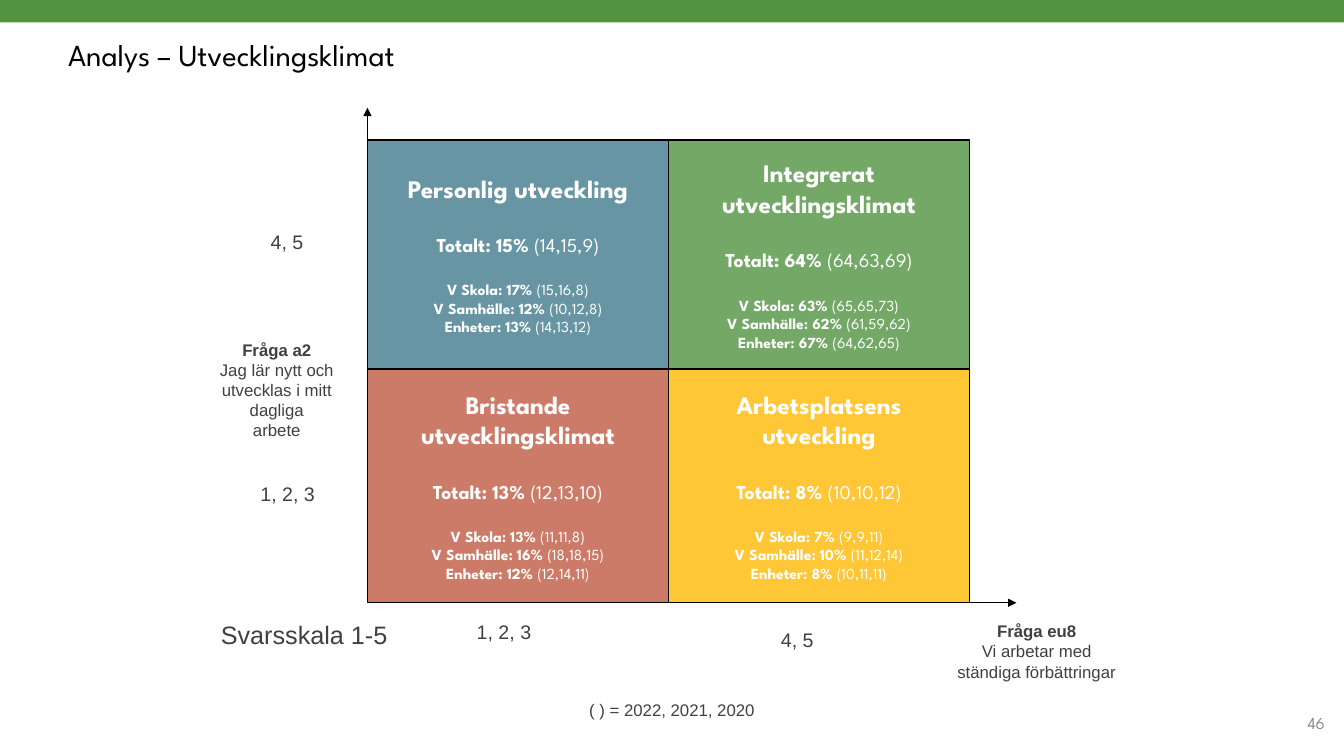
"""Build a slide with a two by two matrix of development climate."""
from lxml.etree import SubElement
from pptx import Presentation
from pptx.dml.color import RGBColor
from pptx.enum.shapes import MSO_CONNECTOR, MSO_SHAPE
from pptx.enum.text import MSO_ANCHOR, MSO_AUTO_SIZE, PP_ALIGN
from pptx.oxml.ns import qn
from pptx.util import Pt

WHITE = RGBColor(0xFF, 0xFF, 0xFF)
BLACK = RGBColor(0, 0, 0)
DARK = RGBColor(0x40, 0x40, 0x40)
GREY = RGBColor(0x8C, 0x8C, 0x8C)
BLUE = RGBColor(0x41, 0x7B, 0x8D)
GREEN = RGBColor(0x52, 0x93, 0x41)
RED = RGBColor(0xC1, 0x5A, 0x44)
YELLOW = RGBColor(0xFF, 0xBA, 0x03)
BRAND = "League Spartan"
PLAIN = "Arial"
LEFT, TOP = 262.5, 100
WIDE = 215
ROWS = [(TOP, 163.5), (TOP + 163.5, 167)]
BASE = TOP + 163.5 + 167
UNITS = ["V Skola", "V Samhälle", "Enheter"]

QUADS = [
    (0, 0, BLUE, ["Personlig utveckling"], ("15%", "14,15,9"),
     [("17%", "15,16,8"), ("12%", "10,12,8"), ("13%", "14,13,12")]),
    (0, 1, GREEN, ["Integrerat", "utvecklingsklimat"], ("64%", "64,63,69"),
     [("63%", "65,65,73"), ("62%", "61,59,62"), ("67%", "64,62,65")]),
    (1, 0, RED, ["Bristande", "utvecklingsklimat"], ("13%", "12,13,10"),
     [("13%", "11,11,8"), ("16%", "18,18,15"), ("12%", "12,14,11")]),
    (1, 1, YELLOW, ["Arbetsplatsens", "utveckling"], ("8%", "10,10,12"),
     [("7%", "9,9,11"), ("10%", "11,12,14"), ("8%", "10,11,11")]),
]

LABELS = [
    ((137, 239, 121.5, 80), 12, True,
     ["Fråga a2", "Jag lär nytt och", "utvecklas i mitt dagliga", "arbete"]),
    ((672, 440, 137, 51), 12, True,
     ["Fråga eu8", "Vi arbetar med ständiga förbättringar"]),
    ((333, 439, 54, 24.5), 14, False, ["1, 2, 3"]),
    ((178.5, 340.5, 54, 24.5), 14, False, ["1, 2, 3"]),
    ((550.5, 445, 38, 24.5), 14, False, ["4, 5"]),
    ((186, 161, 38, 24.5), 14, False, ["4, 5"]),
    ((150, 439, 134.5, 29), 18, False, ["Svarsskala 1-5"]),
    ((413, 496, 134, 22), 12, False, ["( ) = 2022, 2021, 2020"]),
]


def put(item, form):
    """Set each attribute named in a dict of format values."""
    for name, value in form.items():
        setattr(item, name, value)


def write(frame, lines, face, tint, align):
    """Fill a frame with lines of (space before, size, runs)."""
    for spot, (gap, size, runs) in enumerate(lines):
        para = frame.add_paragraph() if spot else frame.paragraphs[0]
        put(para, {"alignment": align, "space_before": Pt(gap)})
        for text, bold in runs:
            run = para.add_run()
            run.text = text
            put(run.font, {"name": face, "size": Pt(size), "bold": bold})
            run.font.color.rgb = tint


def add_block(slide, box, tint):
    """Add a plain filled rectangle without a line."""
    block = slide.shapes.add_shape(MSO_SHAPE.RECTANGLE, *map(Pt, box))
    block.shadow.inherit = False
    block.fill.solid()
    block.fill.fore_color.rgb = tint
    block.line.fill.background()
    return block


def add_quad(slide, row, col, tint, title, total, parts):
    """Add one quadrant with its title, total and unit results."""
    top, high = ROWS[row]
    quad = add_block(slide, (LEFT + col * WIDE, top, WIDE, high), tint)
    color = quad.fill._xPr.find(".//" + qn("a:srgbClr"))
    SubElement(color, qn("a:alpha"), val="80000")
    quad.line.color.rgb = BLACK
    quad.line.width = Pt(1)
    put(quad.text_frame,
        {"word_wrap": False, "vertical_anchor": MSO_ANCHOR.MIDDLE})
    lines = [(0, 18, [(text, True)]) for text in title]
    results = [("Totalt", total), *zip(UNITS, parts)]
    styles = [(21.5, 14), (17, 11), (0, 11), (0, 11)]
    for (name, (share, past)), (gap, size) in zip(results, styles):
        runs = [(f"{name}: {share} ", True), (f"({past})", False)]
        lines.append((gap, size, runs))
    write(quad.text_frame, lines, BRAND, WHITE, PP_ALIGN.CENTER)


def add_axis(slide, right, top):
    """Add an arrow from the corner of the matrix."""
    axis = slide.shapes.add_connector(
        MSO_CONNECTOR.STRAIGHT, Pt(LEFT), Pt(BASE), Pt(right), Pt(top))
    axis.line.color.rgb = BLACK
    axis.line.width = Pt(1)
    SubElement(axis.line._get_or_add_ln(), qn("a:tailEnd"), type="triangle")
    SubElement(axis._element.spPr, qn("a:effectLst"))


def add_text(slide, box, lines, face, tint, align, form):
    """Add a text box with formatted lines."""
    frame = slide.shapes.add_textbox(*map(Pt, box)).text_frame
    put(frame, form)
    write(frame, lines, face, tint, align)


def add_label(slide, box, size, head, texts):
    """Add a centred label, with a bold first line if it has a head."""
    lines = [(0, size, [(text, head and not spot)])
             for spot, text in enumerate(texts)]
    form = {"word_wrap": head, "auto_size": MSO_AUTO_SIZE.SHAPE_TO_FIT_TEXT}
    add_text(slide, box, lines, PLAIN, DARK, PP_ALIGN.CENTER, form)


def main():
    """Build and save the slide."""
    deck = Presentation()
    put(deck, {"slide_width": Pt(960), "slide_height": Pt(540)})
    slide = deck.slides.add_slide(deck.slide_layouts[6])
    middle = {"word_wrap": True, "vertical_anchor": MSO_ANCHOR.MIDDLE}
    add_block(slide, (0, 0, 960, 16), GREEN)
    add_text(slide, (41.5, 21, 696, 36),
             [(0, 21.8, [("Analys – Utvecklingsklimat", False)])],
             BRAND, BLACK, PP_ALIGN.LEFT, middle)
    for quad in QUADS:
        add_quad(slide, *quad)
    add_axis(slide, LEFT, 77)
    add_axis(slide, 726, BASE)
    for label in LABELS:
        add_label(slide, *label)
    add_text(slide, (729.5, 502, 224, 29), [(0, 12, [("46", False)])],
             BRAND, GREY, PP_ALIGN.RIGHT, middle)
    deck.save("out.pptx")


if __name__ == "__main__":
    main()
